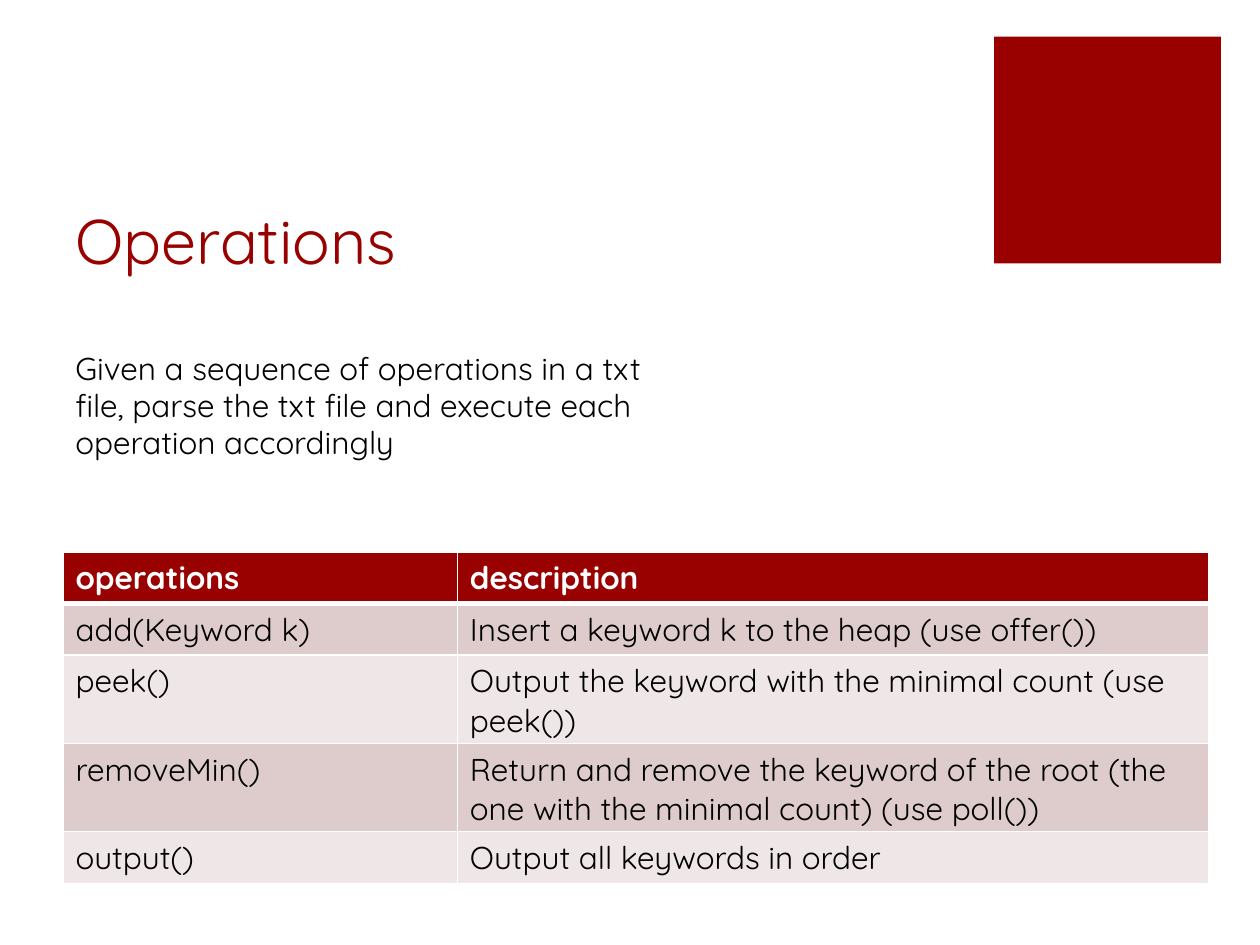
import pptx
import pptx.dml.color
import pptx.enum.shapes
import pptx.enum.text
import pptx.oxml
import pptx.oxml.ns
import pptx.util

WIDTH, HEIGHT = 10, 7.5
MARGIN = WIDTH * 0.05
FONT = "Quicksand"
RED, WHITE, BLACK = "990000", "FFFFFF", "000000"
BANDS = ("DECCCC", "EFE7E7")
OPERATIONS = [
    ("operations", "description"),
    ("add(Keyword k)", "Insert a keyword k to the heap (use offer())"),
    ("peek()", "Output the keyword with the minimal count (use peek())"),
    ("removeMin()", "Return and remove the keyword of the root "
                    "(the one with the minimal count) (use poll())"),
    ("output()", "Output all keywords in order"),
]


def inches(*lengths):
    return [pptx.util.Inches(length) for length in lengths]


def color(hex_string):
    return pptx.dml.color.RGBColor.from_string(hex_string)


def set_fill(item, hex_string):
    item.fill.solid()
    item.fill.fore_color.rgb = color(hex_string)


def write(tf, text, size, hex_string, bold=False):
    tf.text = text
    p = tf.paragraphs[0]
    for r in p.runs:
        r.font.name = FONT
        r.font.size = pptx.util.Pt(size)
        r.font.bold = bold
        r.font.color.rgb = color(hex_string)
    return p


def add_text(s, box, text, size, hex_string, anchor="TOP"):
    tf = s.shapes.add_textbox(*inches(*box)).text_frame
    tf.word_wrap = True
    tf.vertical_anchor = pptx.enum.text.MSO_ANCHOR[anchor]
    return write(tf, text, size, hex_string)


def add_square(s, left, top, side):
    sp = s.shapes.add_shape(pptx.enum.shapes.MSO_SHAPE.RECTANGLE,
                            *inches(left, top, side, side))
    sp.shadow.inherit = False
    set_fill(sp, RED)
    sp.line.fill.background()


def set_borders(cell, top, bottom):
    """Draw white borders, with the top and bottom widths in points."""
    tc_pr = cell._tc.get_or_add_tcPr()
    sides = {"L": 1, "R": 1, "T": top, "B": bottom}
    for i, (side, width) in enumerate(sides.items()):
        ln = pptx.oxml.parse_xml(
            f'<a:ln{side} {pptx.oxml.ns.nsdecls("a")} w="{pptx.util.Pt(width)}">'
            f'<a:solidFill><a:srgbClr val="{WHITE}"/></a:solidFill></a:ln{side}>')
        tc_pr.insert(i, ln)


def add_operations_table(s, left, top, col_widths, row_height):
    table = s.shapes.add_table(
        len(OPERATIONS), len(col_widths),
        *inches(left, top, sum(col_widths), row_height * len(OPERATIONS))).table
    for column, width in zip(table.columns, col_widths):
        column.width = pptx.util.Inches(width)
    for i, texts in enumerate(OPERATIONS):
        header = i == 0
        for j, text in enumerate(texts):
            cell = table.cell(i, j)
            write(cell.text_frame, text, 18, WHITE if header else BLACK, header)
            set_fill(cell, RED if header else BANDS[(i - 1) % 2])
            set_borders(cell, top=3 if i == 1 else 1, bottom=3 if header else 1)


def main():
    prs = pptx.Presentation()
    prs.slide_width, prs.slide_height = inches(WIDTH, HEIGHT)
    s = prs.slides.add_slide(prs.slide_layouts[6])
    add_square(s, 7.89, 0.29, 1.8)
    add_text(s, (MARGIN, 1, 7.12, 1.25), "Operations", 36, RED, "BOTTOM")
    add_operations_table(s, MARGIN, 4.38, (3.13, 5.96), 0.41)
    p = add_text(s, (MARGIN, 2.74, WIDTH / 2, 1.01),
                 "Given a sequence of operations in a txt file, parse the txt "
                 "file and execute each operation accordingly", 18, BLACK)
    p.line_spacing = 0.97
    prs.save("out.pptx")


if __name__ == "__main__":
    main()
